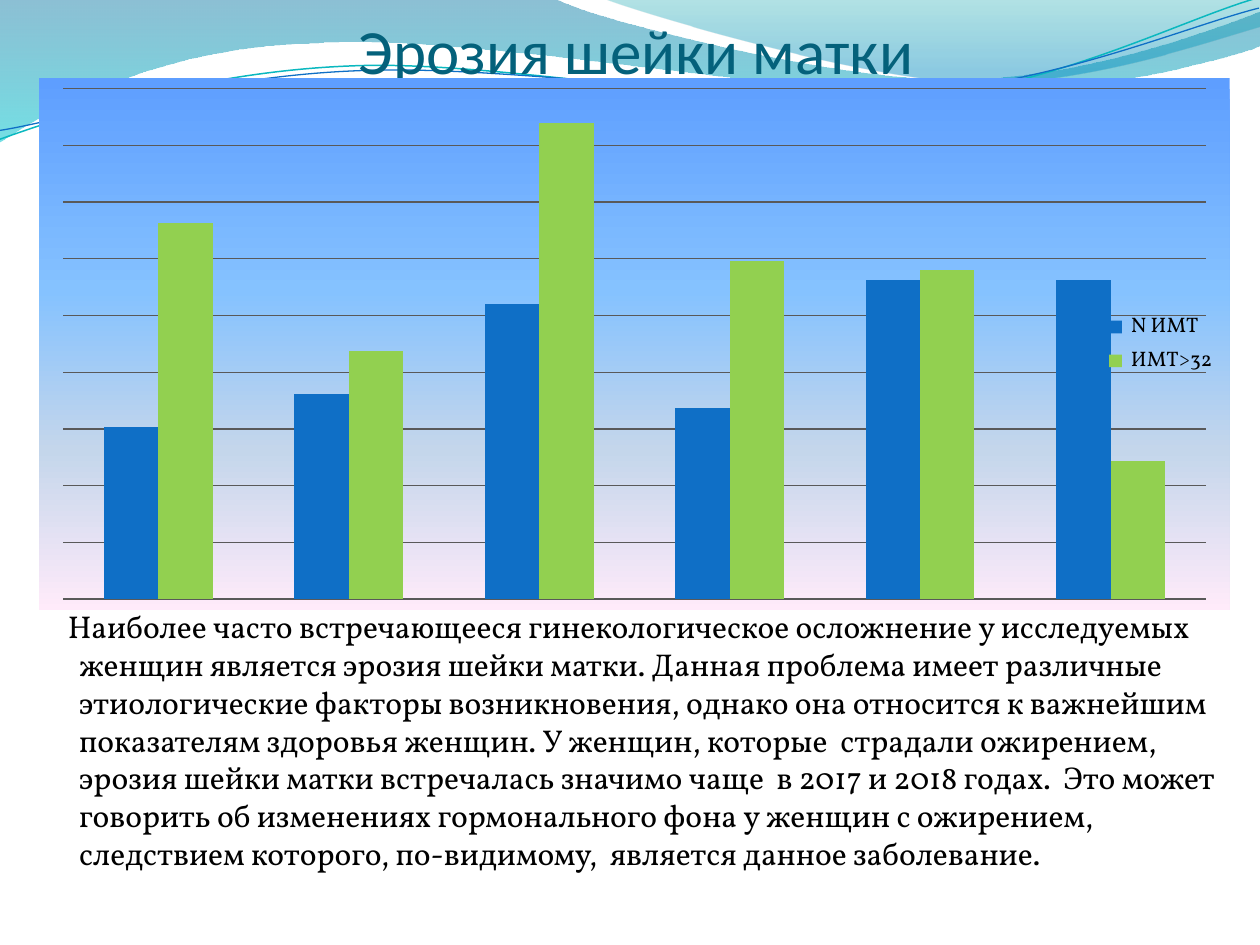
from dataclasses import dataclass

from lxml import etree
from pptx import Presentation
from pptx import util as u
from pptx.chart.data import CategoryChartData
from pptx.dml.color import RGBColor
from pptx.enum import chart as charts, text
from pptx.oxml import parse_xml
from pptx.oxml.ns import nsdecls, qn


@dataclass(frozen=True)
class Theme:
    title_color: str = "04617B"
    ink: str = "000000"
    grid: str = "595959"
    blue: str = "0F6FC6"
    teal: str = "0AB8BF"
    green: str = "92D050"
    # Gradient stops: position %, colour, opacity %
    wide_wave: tuple = ((0, "0074A1", 45), (100, "00C6CF", 55))
    right_wave: tuple = ((0, "00A1A9", 30), (80, "008BBF", 45))
    sky: tuple = ((0, "5E9EFF", 100), (40, "85C2FF", 100),
                  (70, "C4D6EB", 100), (100, "FFEBFA", 100))
    heading_font: str = "Calibri"
    body_font: str = "Vollkorn"
    title_size: int = 36
    body_size: int = 18
    legend_size: int = 12
    chart_size: int = 10


def apply(target, values):
    for name, value in values.items():
        setattr(target, name, value)


def gradient(stops):
    """Top-to-bottom gradient fill."""
    marks = "".join(
        f'<a:gs pos="{pos * 1000}"><a:srgbClr val="{color}">'
        f'<a:alpha val="{alpha * 1000}"/></a:srgbClr></a:gs>'
        for pos, color, alpha in stops)
    return parse_xml(f'<a:gradFill {nsdecls("a")} rotWithShape="1"><a:gsLst>{marks}'
                     '</a:gsLst><a:lin ang="5400000" scaled="0"/></a:gradFill>')


class SlideBuilder:
    def __init__(self, slide, theme):
        self.slide, self.theme = slide, theme

    def outline(self, path, closed):
        """Draw a path whose parts are points (2 numbers) or cubic curves (6)."""
        points = [(u.Inches(x), u.Inches(y))
                  for part in path for x, y in zip(part[::2], part[1::2])]
        builder = self.slide.shapes.build_freeform(*points[0])
        builder.add_line_segments(points[1:], close=closed)
        shape = builder.convert_to_shape()
        shape.shadow.inherit = False
        # Merge the three segments of each curve into one cubic segment
        segments = iter(list(shape._element.iter(qn("a:lnTo"))))
        for part in path[1:]:
            first = next(segments)
            if len(part) == 6:
                cubic = etree.Element(qn("a:cubicBezTo"))
                first.addprevious(cubic)
                for segment in (first, next(segments), next(segments)):
                    cubic.append(segment[0])
                    segment.getparent().remove(segment)
        return shape

    def wave(self, path, stops):
        shape = self.outline(path, True)
        shape.line.fill.background()
        shape.fill.background()
        props = shape._element.spPr
        props.replace(props.find(qn("a:noFill")), gradient(stops))

    def curve(self, path, color, width, rotation):
        shape = self.outline(path, False)
        shape.rotation = rotation
        shape.fill.background()
        shape.line.color.rgb = RGBColor.from_string(color)
        shape.line.width = u.Pt(width)

    def text(self, box, words, font, color, frame, paragraph, indent=None):
        area = self.slide.shapes.add_textbox(*map(u.Inches, box)).text_frame
        apply(area, {"word_wrap": True, **frame})
        para = area.paragraphs[0]
        apply(para, paragraph)
        if indent:
            left, first = indent
            props = para._p.get_or_add_pPr()
            props.set("marL", str(u.Inches(left)))
            props.set("indent", str(u.Inches(first)))
        run = para.add_run()
        run.text = words
        apply(run.font, font)
        run.font.color.rgb = RGBColor.from_string(color)

    def columns(self, box, categories, series):
        theme = self.theme
        data = CategoryChartData(number_format="0%")
        data.categories = categories
        for name, values, _ in series:
            data.add_series(name, values)
        chart = self.slide.shapes.add_chart(
            charts.XL_CHART_TYPE.COLUMN_CLUSTERED, *map(u.Inches, box), data).chart
        apply(chart, {"has_title": False, "has_legend": True})
        apply(chart.font, {"size": u.Pt(theme.chart_size), "name": theme.body_font})
        chart.font.color.rgb = RGBColor.from_string(theme.ink)

        # Legend over the plot
        apply(chart.legend, {"position": charts.XL_LEGEND_POSITION.RIGHT,
                             "include_in_layout": True})
        apply(chart.legend.font, {"size": u.Pt(theme.legend_size),
                                  "name": theme.body_font})
        chart.legend.font.color.rgb = RGBColor.from_string(theme.ink)

        # Hidden axes; nine grid steps remain visible
        chart.category_axis.visible = False
        apply(chart.value_axis, {"visible": False, "has_major_gridlines": True,
                                 "minimum_scale": 0, "maximum_scale": 107.1,
                                 "major_unit": 11.9})
        apply(chart.value_axis.tick_labels, {"number_format": "0%",
                                             "number_format_is_linked": False})
        grid = chart.value_axis.major_gridlines.format.line
        grid.color.rgb = RGBColor.from_string(theme.grid)
        grid.width = u.Pt(0.75)

        # Columns
        plot = chart.plots[0]
        apply(plot, {"gap_width": 150, "overlap": 0, "vary_by_categories": False})
        for bars, (_, _, color) in zip(plot.series, series):
            bars.format.fill.solid()
            bars.format.fill.fore_color.rgb = RGBColor.from_string(color)

        # Plot margins of 2 % on each side, gradient behind the chart
        area = chart._chartSpace.chart.plotArea
        for old in area.findall(qn("c:layout")):
            area.remove(old)
        settings = {"layoutTarget": "inner", "xMode": "edge", "yMode": "edge",
                    "x": 0.02, "y": 0.02, "w": 0.96, "h": 0.96}
        marks = "".join(f'<c:{tag} val="{value}"/>' for tag, value in settings.items())
        area.insert(0, parse_xml(f'<c:layout {nsdecls("c")}><c:manualLayout>{marks}'
                                 '</c:manualLayout></c:layout>'))
        props = parse_xml(f'<c:spPr {nsdecls("c", "a")}/>')
        props.append(gradient(theme.sky))
        etree.SubElement(etree.SubElement(props, qn("a:ln")), qn("a:noFill"))
        chart._chartSpace.chart.addnext(props)


def main():
    theme = Theme()
    deck = Presentation()
    deck.slide_width, deck.slide_height = u.Inches(10), u.Inches(7.5)
    page = SlideBuilder(deck.slides.add_slide(deck.slide_layouts[6]), theme)

    # Header waves
    page.wave([(0, 0), (4.4, -0.01), (4.76, 0.17, 6.64, 0.63, 7.58, 0.63),
               (8.53, 0.63, 9.58, 0.26, 10, 0.09), (10.01, 0.36),
               (9.83, 0.44, 8.7, 0.76, 7.46, 0.75),
               (6.22, 0.75, 3.82, 0.28, 2.57, 0.34),
               (1.29, 0.36, 0.46, 0.83, -0.01, 1.13)], theme.wide_wave)
    page.wave([(4.79, -0.01), (5.09, 0.11, 6.82, 0.62, 7.69, 0.65),
               (8.56, 0.69, 9.61, 0.32, 10, 0.21), (10, 0)], theme.right_wave)

    # Thin tilted curves
    tilt = 357.3
    page.curve([(-0.02, 0.87), (0.47, 0.72, 1.58, 0.41, 2.78, 0.42),
                (3.96, 0.42, 5.91, 0.93, 7.12, 0.9),
                (8.32, 0.87, 9.4, 0.36, 10, 0.22)], theme.teal, 0.85, tilt)
    page.curve([(-0.02, 0.8), (0.46, 0.75, 1.64, 0.45, 2.83, 0.46),
                (4.04, 0.46, 5.96, 0.88, 7.16, 0.85),
                (8.35, 0.83, 9.42, 0.42, 10.01, 0.3)], theme.blue, 0.75, tilt)

    # Title
    page.text((0.55, 0, 9, 0.69), "Эрозия шейки матки",
              {"size": u.Pt(theme.title_size), "name": theme.heading_font},
              theme.title_color,
              {"vertical_anchor": text.MSO_ANCHOR.BOTTOM, "margin_left": 0,
               "margin_right": 0, "margin_bottom": 0},
              {"alignment": text.PP_ALIGN.CENTER})

    # Commentary
    page.text((0.23, 4.77, 9.53, 2.5),
              "Наиболее часто встречающееся гинекологическое осложнение у исследуемых "
              "женщин является эрозия шейки матки. Данная проблема имеет различные "
              "этиологические факторы возникновения, однако она относится к важнейшим "
              "показателям здоровья женщин. У женщин, которые  страдали ожирением, "
              "эрозия шейки матки встречалась значимо чаще  в 2017 и 2018 годах.  Это "
              "может говорить об изменениях гормонального фона у женщин с ожирением, "
              "следствием которого, по-видимому,  является данное заболевание.",
              {"size": u.Pt(theme.body_size), "name": theme.body_font}, theme.ink,
              {"vertical_anchor": text.MSO_ANCHOR.TOP},
              {"space_before": u.Pt(3.6)}, indent=(0.3, -0.09))

    # Comparison by body mass index
    page.columns((0.31, 0.62, 9.45, 4.22), [str(n) for n in range(1, 7)],
                 [(" N ИМТ", (36, 43, 62, 40, 67, 67), theme.blue),
                  (" ИМТ>32", (79, 52, 100, 71, 69, 29), theme.green)])

    deck.save("out.pptx")


if __name__ == "__main__":
    main()
